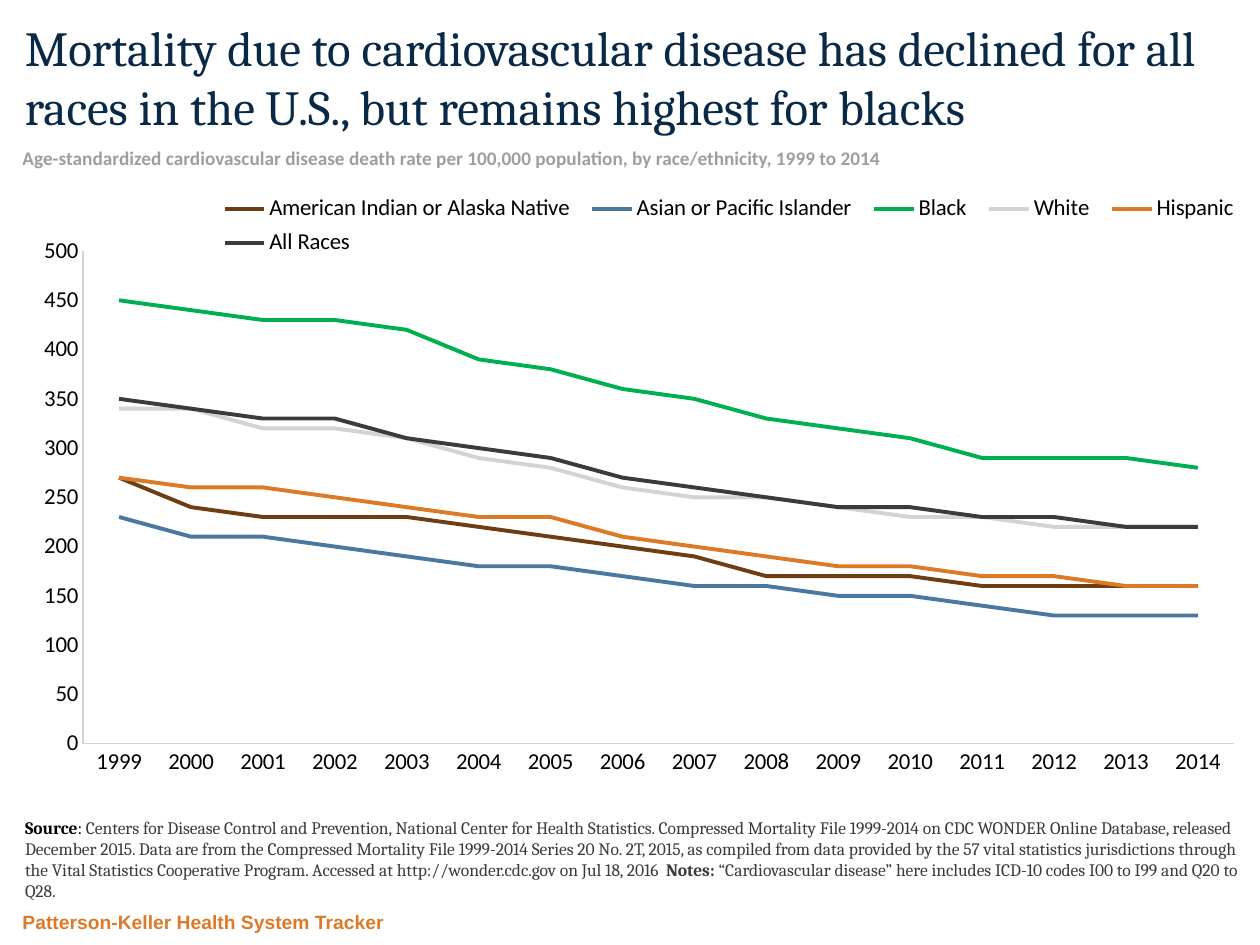
from lxml.etree import SubElement
from pptx import Presentation
from pptx.chart.data import CategoryChartData
from pptx.dml.color import RGBColor
from pptx.enum.chart import XL_CHART_TYPE, XL_LEGEND_POSITION, XL_TICK_MARK
from pptx.enum.text import MSO_ANCHOR
from pptx.oxml.ns import qn
from pptx.util import Inches, Pt

NAVY = RGBColor(0x09, 0x29, 0x47)
GRAY = RGBColor(0x9E, 0x9E, 0x9E)
BLACK = RGBColor(0x00, 0x00, 0x00)
CHARCOAL = RGBColor(0x3C, 0x3A, 0x3B)
ORANGE = RGBColor(0xDC, 0x7A, 0x27)
BROWN = RGBColor(0x6F, 0x3D, 0x12)
BLUE = RGBColor(0x4B, 0x78, 0xA1)
GREEN = RGBColor(0x00, 0xB0, 0x50)
SILVER = RGBColor(0xD3, 0xD3, 0xD3)


def add_text(page, place, anchor, spans, font_format):
    box = page.shapes.add_textbox(*[Inches(length) for length in place])
    frame = box.text_frame
    frame.word_wrap = True
    frame.vertical_anchor = anchor
    para = frame.paragraphs[0]
    for text, color, bold in spans:
        span = para.add_run()
        span.text = text
        span.font.color.rgb = color
        for key, value in {**font_format, "bold": bold}.items():
            setattr(span.font, key, value)


def set_layout(layout, target, place):
    for child in list(layout):
        layout.remove(child)
    manual = SubElement(layout, qn("c:manualLayout"))
    values = {"xMode": "edge", "yMode": "edge", **dict(zip("xywh", place))}
    if target:
        values = {"layoutTarget": target, **values}
    for key, value in values.items():
        SubElement(manual, qn("c:" + key)).set("val", str(value))


deck = Presentation()
deck.slide_width = Inches(10)
deck.slide_height = Inches(7.5)
page = deck.slides.add_slide(deck.slide_layouts[6])

texts = [
    ((0.1, 0.11, 9.8, 1), MSO_ANCHOR.MIDDLE, [
        ("Mortality due to cardiovascular disease has declined for all races in the U.S., "
         "but remains highest for blacks", NAVY, False),
    ], {"size": Pt(28), "name": "Cambria"}),
    ((0.08, 1.11, 9.67, 0.29), MSO_ANCHOR.TOP, [
        ("Age-standardized cardiovascular disease death rate per 100,000 population, "
         "by race/ethnicity, 1999 to 2014", GRAY, True),
    ], {"size": Pt(11), "name": "Calibri"}),
    ((0.1, 6.4, 9.82, 0.8), MSO_ANCHOR.BOTTOM, [
        ("Source", BLACK, True),
        (": ", BLACK, False),
        ("Centers for Disease Control and Prevention, National Center for Health Statistics. "
         "Compressed Mortality File 1999-2014 on CDC WONDER Online Database, released "
         "December 2015. Data are from the Compressed Mortality File 1999-2014 Series 20 "
         "No. 2T, 2015, as compiled from data provided by the 57 vital statistics "
         "jurisdictions through the Vital Statistics Cooperative Program. Accessed at "
         "http://wonder.cdc.gov on Jul 18, 2016  ", CHARCOAL, False),
        ("Notes: ", CHARCOAL, True),
        ("“Cardiovascular disease” here includes ICD-10 codes I00 to I99 and Q20 to Q28.",
         CHARCOAL, False),
    ], {"size": Pt(10), "name": "Cambria"}),
    ((0.08, 7.16, 7.98, 0.3), MSO_ANCHOR.BOTTOM, [
        ("Patterson-Keller Health System Tracker", ORANGE, True),
    ], {"size": Pt(11), "name": "Arial"}),
]
for place, anchor, spans, font_format in texts:
    add_text(page, place, anchor, spans, font_format)

death_rates = [
    ("American Indian or Alaska Native", BROWN,
     [270, 240, 230, 230, 230, 220, 210, 200, 190, 170, 170, 170, 160, 160, 160, 160]),
    ("Asian or Pacific Islander", BLUE,
     [230, 210, 210, 200, 190, 180, 180, 170, 160, 160, 150, 150, 140, 130, 130, 130]),
    ("Black", GREEN,
     [450, 440, 430, 430, 420, 390, 380, 360, 350, 330, 320, 310, 290, 290, 290, 280]),
    ("White", SILVER,
     [340, 340, 320, 320, 310, 290, 280, 260, 250, 250, 240, 230, 230, 220, 220, 220]),
    ("Hispanic", ORANGE,
     [270, 260, 260, 250, 240, 230, 230, 210, 200, 190, 180, 180, 170, 170, 160, 160]),
    ("All Races", CHARCOAL,
     [350, 340, 330, 330, 310, 300, 290, 270, 260, 250, 240, 240, 230, 230, 220, 220]),
]
data = CategoryChartData()
data.categories = [str(year) for year in range(1999, 2015)]
for name, color, rates in death_rates:
    data.add_series(name, rates)
chart = page.shapes.add_chart(
    XL_CHART_TYPE.LINE, Inches(0.09), Inches(1.4), Inches(9.82), Inches(4.9), data
).chart
chart.has_title = False
chart.font.size = Pt(13)
chart.font.name = "Calibri"
chart.font.color.rgb = BLACK

plot = chart.plots[0]
plot.vary_by_categories = False
for series, (name, color, rates) in zip(plot.series, death_rates):
    series.smooth = False
    series.format.line.width = Pt(2.25)
    series.format.line.color.rgb = color

axis_format = {
    "has_major_gridlines": False,
    "major_tick_mark": XL_TICK_MARK.NONE,
    "minor_tick_mark": XL_TICK_MARK.NONE,
}
for axis in (chart.category_axis, chart.value_axis):
    for key, value in axis_format.items():
        setattr(axis, key, value)
    axis.format.line.width = Pt(0.75)
    axis.format.line.color.rgb = SILVER
for key, value in {"minimum_scale": 0, "maximum_scale": 500, "major_unit": 50}.items():
    setattr(chart.value_axis, key, value)

chart.has_legend = True
chart.legend.position = XL_LEGEND_POSITION.TOP
chart.legend.include_in_layout = False
legend_layout = chart.legend._element.find(qn("c:layout"))
if legend_layout is None:
    legend_layout = SubElement(chart.legend._element, qn("c:layout"))
    chart.legend._element.find(qn("c:legendPos")).addnext(legend_layout)
set_layout(legend_layout, None, (0.16, 0.02, 0.84, 0.12))

plot_area = chart._chartSpace.chart.plotArea
plot_layout = plot_area.find(qn("c:layout"))
if plot_layout is None:
    plot_layout = SubElement(plot_area, qn("c:layout"))
    plot_area.insert(0, plot_layout)
set_layout(plot_layout, "inner", (0.058, 0.121, 0.93, 0.798))

deck.save("out.pptx")
